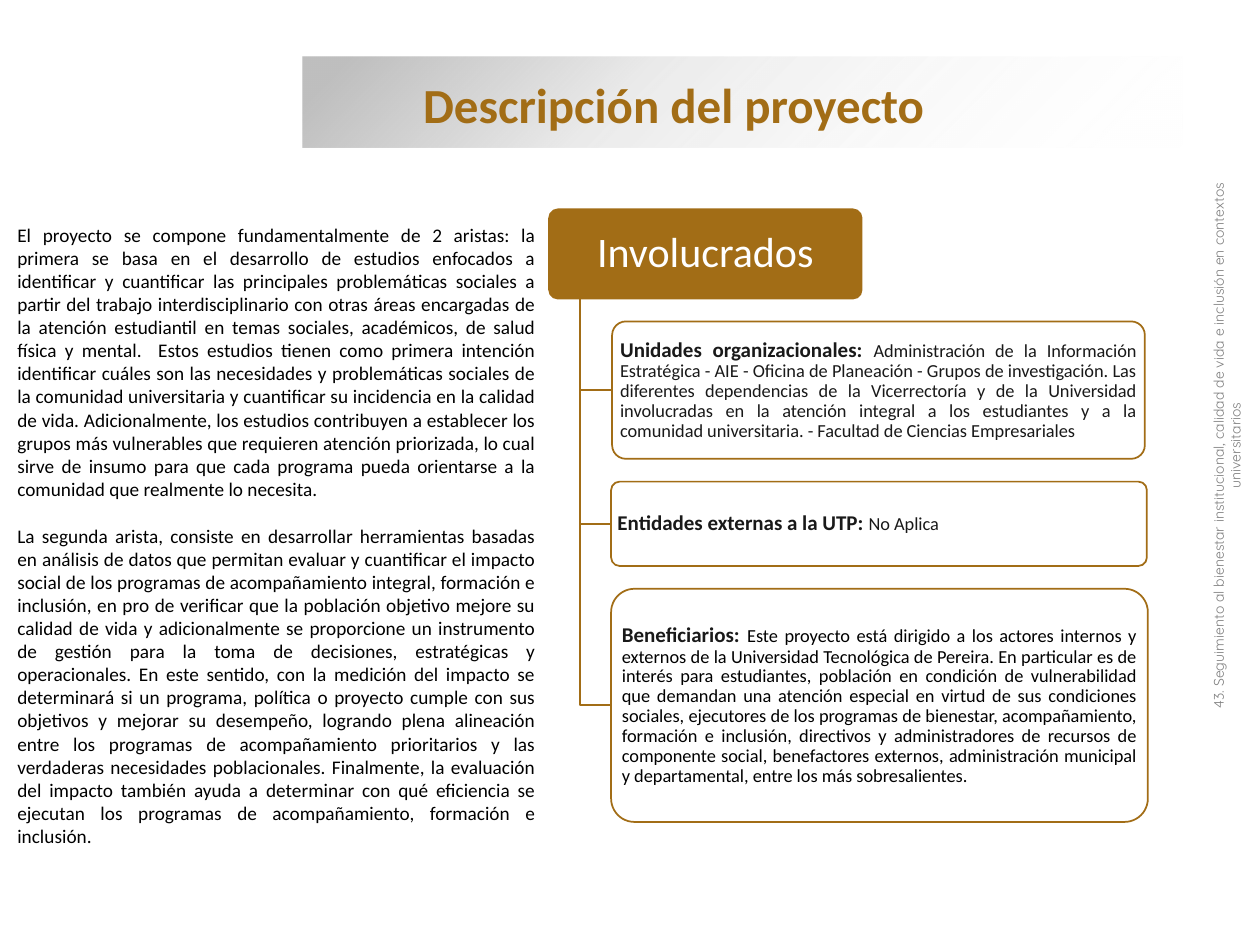
from dataclasses import dataclass

from lxml import etree
from pptx import Presentation
from pptx.dml.color import RGBColor
from pptx.enum.shapes import MSO_SHAPE as SHAPE
from pptx.enum.text import MSO_ANCHOR as ANCHOR, MSO_AUTO_SIZE as AUTO, PP_ALIGN as ALIGN
from pptx.oxml.ns import qn
from pptx.util import Cm, Pt


@dataclass(frozen=True)
class Theme:
    accent: str = "A26D16"
    white: str = "FFFFFF"
    black: str = "000000"
    ink: str = "191919"
    muted: str = "808080"
    band: str = "BFBFBF"
    font: str = "Calibri"
    side_font: str = "Quicksand"
    title: float = 28
    header: float = 24
    label: float = 12
    body: float = 11
    detail: float = 10.5
    side: float = 8
    line: float = 1


T = Theme()

# one tuple of text parts per paragraph
DESCRIPTION = [
    ("El proyecto se compone fundamentalmente de 2 aristas: la primera se basa en el desarrollo de estudios "
     "enfocados a identificar y cuantificar las principales problemáticas sociales a partir del trabajo "
     "interdisciplinario con otras áreas encargadas de la atención estudiantil en temas sociales, académicos, "
     "de salud física y mental.  ",
     "Estos estudios tienen como primera intención identificar cuáles son las "
     "necesidades y problemáticas sociales de la comunidad universitaria y cuantificar su incidencia en la "
     "calidad de vida. Adicionalmente, los estudios contribuyen a establecer los grupos más vulnerables que "
     "requieren atención priorizada, lo cual sirve de insumo para que cada programa pueda orientarse a la "
     "comunidad que realmente lo necesita."),
    ("La segunda arista, consiste en desarrollar herramientas basadas en análisis de datos que permitan "
     "evaluar y cuantificar el impacto social de los programas de acompañamiento integral, formación e "
     "inclusión, en pro de verificar que la población objetivo mejore su calidad de vida y adicionalmente se "
     "proporcione un instrumento de gestión para la toma de decisiones, estratégicas y operacionales. ",
     "En este sentido, con la medición del impacto se determinará si un programa, política o proyecto cumple "
     "con sus objetivos y mejorar su desempeño, logrando plena alineación entre los programas de "
     "acompañamiento prioritarios y las verdaderas necesidades poblacionales. Finalmente, la evaluación del "
     "impacto también ayuda a determinar con qué eficiencia se ejecutan los programas de acompañamiento, "
     "formación e inclusión."),
]

# left, width, height (cm), label, detail, detail colour
CARDS = [
    (12.34, 10.74, 2.77, "Unidades organizacionales: ",
     "Administración de la Información Estratégica - AIE - Oficina de Planeación - Grupos de investigación. "
     "Las diferentes dependencias de la Vicerrectoría y de la Universidad involucradas en la atención "
     "integral a los estudiantes y a la comunidad universitaria. - Facultad de Ciencias Empresariales", T.ink),
    (12.32, 10.8, 1.7, "Entidades externas a la UTP: ", "No Aplica", T.ink),
    (12.32, 10.82, 4.7, "Beneficiarios: ",
     "Este proyecto está dirigido a los actores internos y externos de la Universidad Tecnológica de Pereira. "
     "En particular es de interés para estudiantes, población en condición de vulnerabilidad que demandan una "
     "atención especial en virtud de sus condiciones sociales, ejecutores de los programas de bienestar, "
     "acompañamiento, formación e inclusión, directivos y administradores de recursos de componente social, "
     "benefactores externos, administración municipal y departamental, entre los más sobresalientes.", T.black),
]


def add_run(p, text, size, color, bold=False, font=T.font):
    r = p.add_run()
    r.text = text
    r.font.name, r.font.size, r.font.bold = font, Pt(size), bold
    r.font.color.rgb = RGBColor.from_string(color)


def add_textbox(slide, left, top, width, height):
    box = slide.shapes.add_textbox(Cm(left), Cm(top), Cm(width), Cm(height))
    box.text_frame.word_wrap = True
    box.text_frame.auto_size = AUTO.SHAPE_TO_FIT_TEXT
    return box


def add_title_band(slide):
    """Rectangle whose grey fades to transparent along the diagonal."""
    sp = slide.shapes.add_shape(SHAPE.RECTANGLE, Cm(6.1), Cm(1.14), Cm(17.73), Cm(1.83))
    sp.shadow.inherit = False
    sp.line.fill.background()
    sp.fill.gradient()
    grad = sp._element.spPr.find(qn("a:gradFill"))
    grad.find(qn("a:lin")).set("ang", str(45 * 60000))
    stops = grad.find(qn("a:gsLst"))
    for old in list(stops):
        stops.remove(old)
    for pos, color, alpha in [(5, T.band, 100), (37, T.band, 31), (100, T.white, 0)]:
        stop = etree.SubElement(stops, qn("a:gs"), pos=str(pos * 1000))
        clr = etree.SubElement(stop, qn("a:srgbClr"), val=color)
        etree.SubElement(clr, qn("a:alpha"), val=str(alpha * 1000))


def add_title(slide):
    tf = add_textbox(slide, 8.28, 1.37, 15.75, 1.45).text_frame
    tf.vertical_anchor = ANCHOR.MIDDLE
    add_run(tf.paragraphs[0], "Descripción del proyecto", T.title, T.accent, bold=True)


def add_rounded_box(slide, left, top, width, height, fill, insets, align, alpha=100):
    """Outlined rounded box; returns its empty paragraph."""
    sp = slide.shapes.add_shape(SHAPE.ROUNDED_RECTANGLE, Cm(left), Cm(top), Cm(width), Cm(height))
    sp.adjustments[0] = 0.1
    sp.shadow.inherit = False
    sp.fill.solid()
    sp.fill.fore_color.rgb = RGBColor.from_string(fill)
    if alpha < 100:
        clr = sp._element.spPr.find(qn("a:solidFill")).find(qn("a:srgbClr"))
        etree.SubElement(clr, qn("a:alpha"), val=str(alpha * 1000))
    sp.line.color.rgb = RGBColor.from_string(T.accent)
    sp.line.width = Pt(T.line)
    tf = sp.text_frame
    tf.word_wrap = True
    tf.vertical_anchor = ANCHOR.MIDDLE
    tf.margin_left = tf.margin_right = Cm(insets[0])
    tf.margin_top = tf.margin_bottom = Cm(insets[1])
    p = tf.paragraphs[0]
    p.alignment, p.line_spacing = align, 0.9
    return p


def add_branch(slide, x, top, bottom, right):
    """L-shaped line from the header down and across to a card."""
    builder = slide.shapes.build_freeform(Cm(x), Cm(top))
    builder.add_line_segments([(Cm(x), Cm(bottom)), (Cm(right), Cm(bottom))], close=False)
    sp = builder.convert_to_shape()
    sp.shadow.inherit = False
    sp.fill.background()
    sp.line.color.rgb = RGBColor.from_string(T.accent)
    sp.line.width = Pt(T.line)


def add_hierarchy(slide):
    left, top, width, height, gap = 11.07, 4.22, 6.3, 1.8, 0.46
    p = add_rounded_box(slide, left, top, width, height, T.accent, (0.13, 0.08), ALIGN.CENTER)
    add_run(p, "Involucrados", T.header, T.white)
    bottom = top + height
    y = bottom + gap
    for card_left, card_width, card_height, label, detail, color in CARDS:
        add_branch(slide, left + width / 10, bottom, y + card_height / 2, card_left)
        p = add_rounded_box(slide, card_left, y, card_width, card_height, T.white,
                            (0.08, 0.05), ALIGN.JUSTIFY, alpha=90)
        add_run(p, label, T.label, T.ink, bold=True)
        add_run(p, detail, T.detail, color)
        y += card_height + gap


def add_description(slide):
    tf = add_textbox(slide, 0.1, 4.37, 10.95, 12.95).text_frame
    for i, parts in enumerate(DESCRIPTION):
        p = tf.add_paragraph() if i else tf.paragraphs[0]
        p.alignment = ALIGN.JUSTIFY
        if i:
            p.space_before = Pt(13.4)
        for text in parts:
            add_run(p, text, T.body, T.black)


def add_side_caption(slide):
    box = add_textbox(slide, 18.59, 8.51, 12.29, 0.94)
    box.rotation = 270
    p = box.text_frame.paragraphs[0]
    p.alignment = ALIGN.CENTER
    add_run(p, "43. Seguimiento al bienestar institucional, calidad de vida e inclusión en contextos universitarios",
            T.side, T.muted, font=T.side_font)


def main():
    prs = Presentation()
    prs.slide_width, prs.slide_height = Cm(25.4), Cm(19.05)
    slide = prs.slides.add_slide(prs.slide_layouts[6])
    add_title_band(slide)
    add_title(slide)
    add_hierarchy(slide)
    add_description(slide)
    add_side_caption(slide)
    prs.save("out.pptx")


if __name__ == "__main__":
    main()
